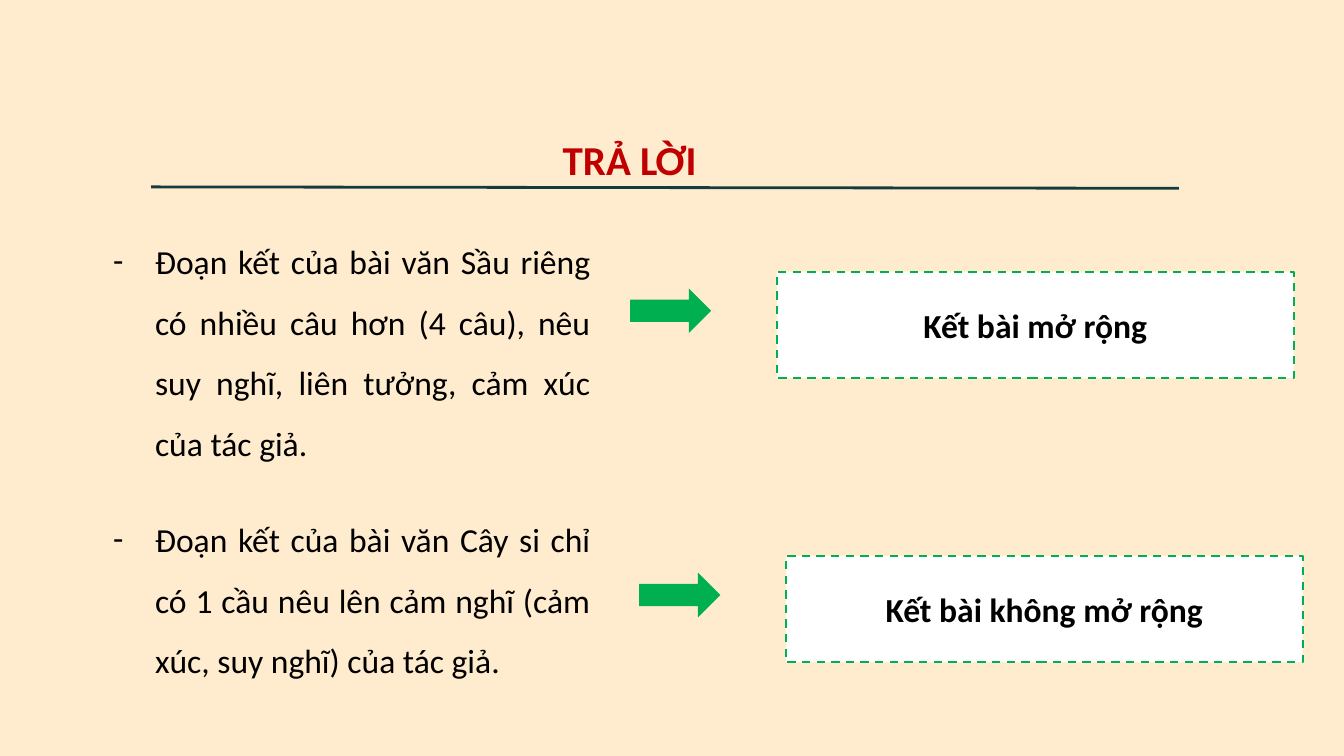
from lxml.etree import SubElement
from pptx import Presentation
from pptx.dml.color import RGBColor
from pptx.enum.dml import MSO_LINE
from pptx.enum.shapes import MSO_CONNECTOR, MSO_SHAPE
from pptx.enum.text import MSO_ANCHOR, MSO_AUTO_SIZE, PP_ALIGN
from pptx.oxml.ns import qn
from pptx.util import Pt

PX = 9525  # EMU in one px, 96 px to the inch
FONT = "Calibri"
CREAM = RGBColor(0xFF, 0xEC, 0xCE)
RED = RGBColor(0xC0, 0x00, 0x00)
TEAL = RGBColor(0x14, 0x3C, 0x3C)
GREEN = RGBColor(0x00, 0xB0, 0x50)
WHITE = RGBColor(0xFF, 0xFF, 0xFF)
BLACK = RGBColor(0x00, 0x00, 0x00)

# Explanation, its top, kind of ending, left and top of the arrow
ANSWERS = [
    ("Đoạn kết của bài văn Sầu riêng có nhiều câu hơn (4 câu), "
     "nêu suy nghĩ, liên tưởng, cảm xúc của tác giả.",
     311, "Kết bài mở rộng", 900, 412),
    ("Đoạn kết của bài văn Cây si chỉ có 1 cầu nêu lên cảm nghĩ "
     "(cảm xúc, suy nghĩ) của tác giả.",
     708, "Kết bài không mở rộng", 913, 818),
]


def px(*lengths):
    return [length * PX for length in lengths]


def write(text_frame, text, size, color, alignment, bold=False):
    text_frame.word_wrap = True
    text_frame.text = text
    paragraph = text_frame.paragraphs[0]
    paragraph.alignment = alignment
    font = paragraph.runs[0].font
    font.name, font.size, font.bold = FONT, Pt(size), bold
    font.color.rgb = color
    return paragraph


def add_title(slide, text):
    title = slide.shapes.title
    title.left, title.top, title.width, title.height = px(676, 134, 447, 112)
    text_frame = title.text_frame
    text_frame.margin_left = text_frame.margin_right = 0
    text_frame.margin_top = text_frame.margin_bottom = 0
    text_frame.vertical_anchor = MSO_ANCHOR.TOP
    text_frame.auto_size = MSO_AUTO_SIZE.NONE
    paragraph = write(text_frame, text, 44, RED, PP_ALIGN.CENTER, bold=True)
    paragraph.line_spacing = Pt(96)
    paragraph.space_before = Pt(0)


def add_rule(slide):
    rule = slide.shapes.add_connector(MSO_CONNECTOR.STRAIGHT, *px(216, 267, 1684, 269))
    rule.line.color.rgb = TEAL
    rule.line.width = Pt(3)
    SubElement(rule._element.spPr, qn("a:effectLst"))


def add_explanation(slide, text, top):
    text_box = slide.shapes.add_textbox(*px(152, top, 701, 348))
    paragraph = write(text_box.text_frame, text, 36, BLACK, PP_ALIGN.JUSTIFY)
    paragraph.line_spacing = 1.5
    properties = paragraph._p.get_or_add_pPr()
    properties.set("marL", str(60 * PX))
    properties.set("indent", str(-60 * PX))
    SubElement(properties, qn("a:buFont"), typeface=FONT)
    SubElement(properties, qn("a:buChar"), char="-")


def add_filled_shape(slide, kind, bounds, fill):
    shape = slide.shapes.add_shape(kind, *px(*bounds))
    shape.shadow.inherit = False
    shape.fill.solid()
    shape.fill.fore_color.rgb = fill
    return shape


def add_arrow(slide, left, top):
    arrow = add_filled_shape(slide, MSO_SHAPE.RIGHT_ARROW, (left, top, 116, 64), GREEN)
    arrow.line.fill.background()


def add_label(slide, text, left, top):
    label = add_filled_shape(slide, MSO_SHAPE.RECTANGLE, (left, top, 738, 152), WHITE)
    label.line.color.rgb = GREEN
    label.line.width = Pt(2.25)
    label.line.dash_style = MSO_LINE.DASH
    label.text_frame.vertical_anchor = MSO_ANCHOR.MIDDLE
    write(label.text_frame, text, 36, BLACK, PP_ALIGN.CENTER, bold=True)


def main():
    presentation = Presentation()
    presentation.slide_width, presentation.slide_height = px(1920, 1080)
    slide = presentation.slides.add_slide(presentation.slide_layouts[5])
    slide.background.fill.solid()
    slide.background.fill.fore_color.rgb = CREAM

    # Heading
    add_title(slide, "TRẢ LỜI")
    add_rule(slide)

    # Explanations, each pointing to its kind of ending
    for explanation, text_top, ending, left, top in ANSWERS:
        add_explanation(slide, explanation, text_top)
        add_arrow(slide, left, top)
        add_label(slide, ending, left + 210, top - 24)

    presentation.save("out.pptx")


if __name__ == "__main__":
    main()
